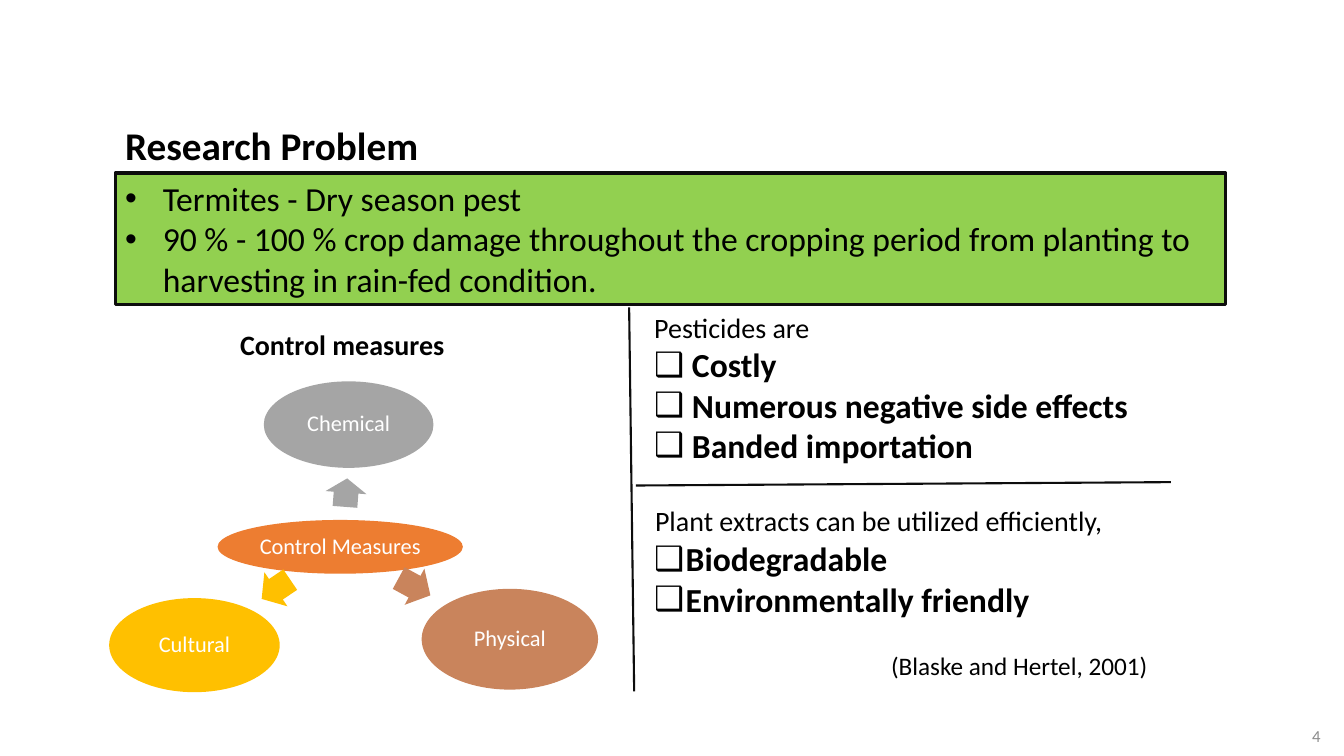
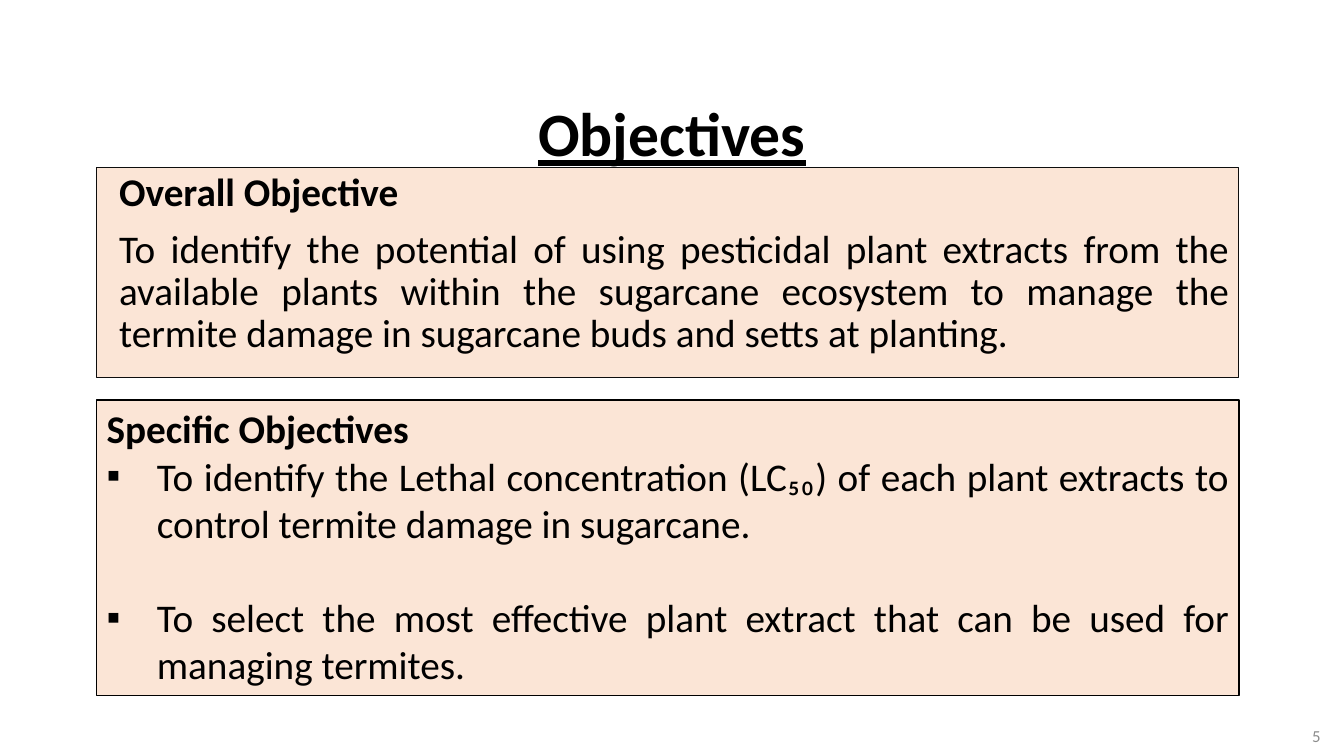
from lxml.etree import SubElement
from pptx import Presentation
from pptx.dml.color import RGBColor
from pptx.enum.shapes import MSO_CONNECTOR, MSO_SHAPE
from pptx.enum.text import MSO_ANCHOR, MSO_AUTO_SIZE, PP_ALIGN
from pptx.oxml.ns import qn
from pptx.util import Inches, Pt

COLS, ROWS = 160, 90
FONT = "Calibri"
HUES = {
    "ink": "000000", "edge": "0D0D0D", "page": "8C8C8C", "white": "FFFFFF",
    "green": "92D050", "peach": "FBE5D6", "hub": "ED7D31",
    "gray": "A5A5A5", "brown": "C9845C", "gold": "FFC000",
}


def hue(name):
    return RGBColor.from_string(HUES[name])


def para(text, size, bold=False, **style):
    return dict(text=text, size=size, bold=bold, **style)


class Deck:
    def __init__(self):
        self.prs = Presentation()
        self.prs.slide_width, self.prs.slide_height = Inches(13.33), Inches(7.5)
        self.slide = None

    def x(self, cols):
        return round(self.prs.slide_width * cols / COLS)

    def y(self, rows):
        return round(self.prs.slide_height * rows / ROWS)

    def area(self, box):
        left, top, width, height = box
        return self.x(left), self.y(top), self.x(width), self.y(height)

    def start(self, page):
        self.slide = self.prs.slides.add_slide(self.prs.slide_layouts[5])
        self.text((122.4, 85.2, 36, 4.8),
                  [para(page, 12, color="page", align=PP_ALIGN.RIGHT)],
                  MSO_ANCHOR.MIDDLE)

    def fill_text(self, frame, paras, anchor=MSO_ANCHOR.TOP):
        frame.word_wrap = True
        frame.auto_size = MSO_AUTO_SIZE.NONE
        frame.vertical_anchor = anchor
        for i, item in enumerate(paras):
            line = frame.paragraphs[0] if i == 0 else frame.add_paragraph()
            self.indent(line, item.get("indent", 0), item.get("bullet"))
            line.alignment = item.get("align", PP_ALIGN.LEFT)
            line.line_spacing = item.get("pitch", 1.0)
            line.space_before = Pt(item.get("before", 0))
            line.space_after = Pt(item.get("after", 0))
            run = line.add_run()
            run.text = item["text"]
            font = run.font
            font.name, font.size = FONT, Pt(item["size"])
            font.bold = item["bold"]
            font.underline = item.get("under", False)
            font.color.rgb = hue(item.get("color", "ink"))

    def indent(self, line, cols, mark):
        props = line._p.get_or_add_pPr()
        props.set("marL", str(self.x(cols)))
        props.set("indent", str(-self.x(cols) if mark else 0))
        if mark:
            SubElement(props, qn("a:buFont"), typeface="Arial")
            SubElement(props, qn("a:buChar"), char=mark)

    def title(self, box, item, anchor=MSO_ANCHOR.TOP):
        head = self.slide.shapes.title
        head.left, head.top, head.width, head.height = self.area(box)
        self.fill_text(head.text_frame, [item], anchor)

    def text(self, box, paras, anchor=MSO_ANCHOR.TOP):
        shape = self.slide.shapes.add_textbox(*self.area(box))
        self.fill_text(shape.text_frame, paras, anchor)

    def shape(self, kind, box, fill):
        shape = self.slide.shapes.add_shape(kind, *self.area(box))
        shape.shadow.inherit = False
        shape.fill.solid()
        shape.fill.fore_color.rgb = hue(fill)
        shape.line.fill.background()
        return shape

    def panel(self, box, fill, edge, weight, paras):
        shape = self.shape(MSO_SHAPE.RECTANGLE, box, fill)
        shape.line.color.rgb = hue(edge)
        shape.line.width = Pt(weight)
        self.fill_text(shape.text_frame, paras)

    def oval(self, box, fill, label):
        frame = self.shape(MSO_SHAPE.OVAL, box, fill).text_frame
        frame.margin_left = frame.margin_right = Inches(0.02)
        frame.margin_top = frame.margin_bottom = Inches(0.02)
        self.fill_text(frame, [para(label, 16, color="white", pitch=0.9,
                                    align=PP_ALIGN.CENTER)], MSO_ANCHOR.MIDDLE)

    def arrow(self, box, fill, turn):
        shape = self.shape(MSO_SHAPE.RIGHT_ARROW, box, fill)
        shape.adjustments[0], shape.adjustments[1] = 0.6, 0.5
        shape.rotation = turn

    def rule(self, x1, y1, x2, y2):
        line = self.slide.shapes.add_connector(
            MSO_CONNECTOR.STRAIGHT, self.x(x1), self.y(y1), self.x(x2), self.y(y2))
        line.line.color.rgb = hue("edge")
        line.line.width = Pt(1.5)
        SubElement(line._element.spPr, qn("a:effectLst"))


def problem(deck):
    deck.start("4")
    deck.title((13.7, 13.8, 52.9, 6.8), para("Research Problem", 28, True))
    facts = ("Termites - Dry season pest",
             "90 % - 100 % crop damage throughout the cropping period "
             "from planting to harvesting in rain-fed condition.")
    deck.panel((13.7, 20.6, 132.2, 15.7), "green", "edge", 2.25,
               [para(fact, 24, indent=4.5, bullet="•") for fact in facts])

    deck.text((27.4, 38.4, 38.6, 5.3), [para("Control measures", 20, True)])
    deck.oval((25.9, 61.9, 29.2, 6.4), "hub", "Control Measures")
    spokes = (
        ("Chemical", "gray", (31.4, 45.4, 20.2, 10.3), (39.5, 56.2, 3.4, 4.9), 274.4),
        ("Physical", "brown", (50.2, 70.1, 21, 12), (47.2, 67.4, 4.3, 4.9), 28.6),
        ("Cultural", "gold", (13, 71.2, 20.3, 11.2), (30.8, 67.7, 4.1, 4.9), 145.9),
    )
    for label, fill, oval, arrow, turn in spokes:
        deck.arrow(arrow, fill, turn)
        deck.oval(oval, fill, label)

    deck.rule(74.9, 36.6, 75.5, 82.3)
    deck.rule(75.7, 57.8, 139.4, 57.4)
    faults = ("Costly", "Numerous negative side effects", "Banded importation")
    deck.text((76.7, 36.4, 69.2, 19.8), [para("Pesticides are", 20)] + [
        para(fault, 24, True, indent=4.5, bullet="❑") for fault in faults])
    deck.text((76.8, 59.4, 65.8, 5.3),
              [para("Plant extracts can be utilized efficiently,", 20)])
    gains = ("Biodegradable", "Environmentally friendly")
    deck.text((76.7, 63.5, 62.8, 11),
              [para(gain, 24, True, indent=3.75, bullet="❑") for gain in gains])
    deck.text((104.9, 76.8, 36, 4.8), [para("(Blaske and Hertel, 2001)", 18)])


def goals(deck):
    deck.start("5")
    deck.title((11, 4.8, 138, 17.4),
               para("Objectives", 44, True, under=True, pitch=1.5, after=8,
                    align=PP_ALIGN.CENTER), MSO_ANCHOR.MIDDLE)
    deck.panel((11.5, 20, 136, 25), "peach", "edge", 0.75, [
        para("Overall Objective", 28, True, indent=1.5, pitch=0.9),
        para("To identify the potential of using pesticidal plant extracts from "
             "the available plants within the sugarcane ecosystem to manage the "
             "termite damage in sugarcane buds and setts at planting.",
             28, indent=1.5, pitch=0.9, before=10, align=PP_ALIGN.JUSTIFY)])
    aims = (("To identify the Lethal concentration (LC₅₀) of each plant extracts "
             "to control termite damage in sugarcane.", 0),
            ("To select the most effective plant extract that can be used for "
             "managing termites.", 34))
    deck.panel((11.5, 47.6, 136, 35.2), "peach", "ink", 1,
               [para("Specific Objectives", 28, True)] + [
                   para(aim, 28, indent=6, bullet="▪", before=gap,
                        align=PP_ALIGN.JUSTIFY) for aim, gap in aims])


def main():
    deck = Deck()
    problem(deck)
    goals(deck)
    deck.prs.save("out.pptx")


if __name__ == "__main__":
    main()
